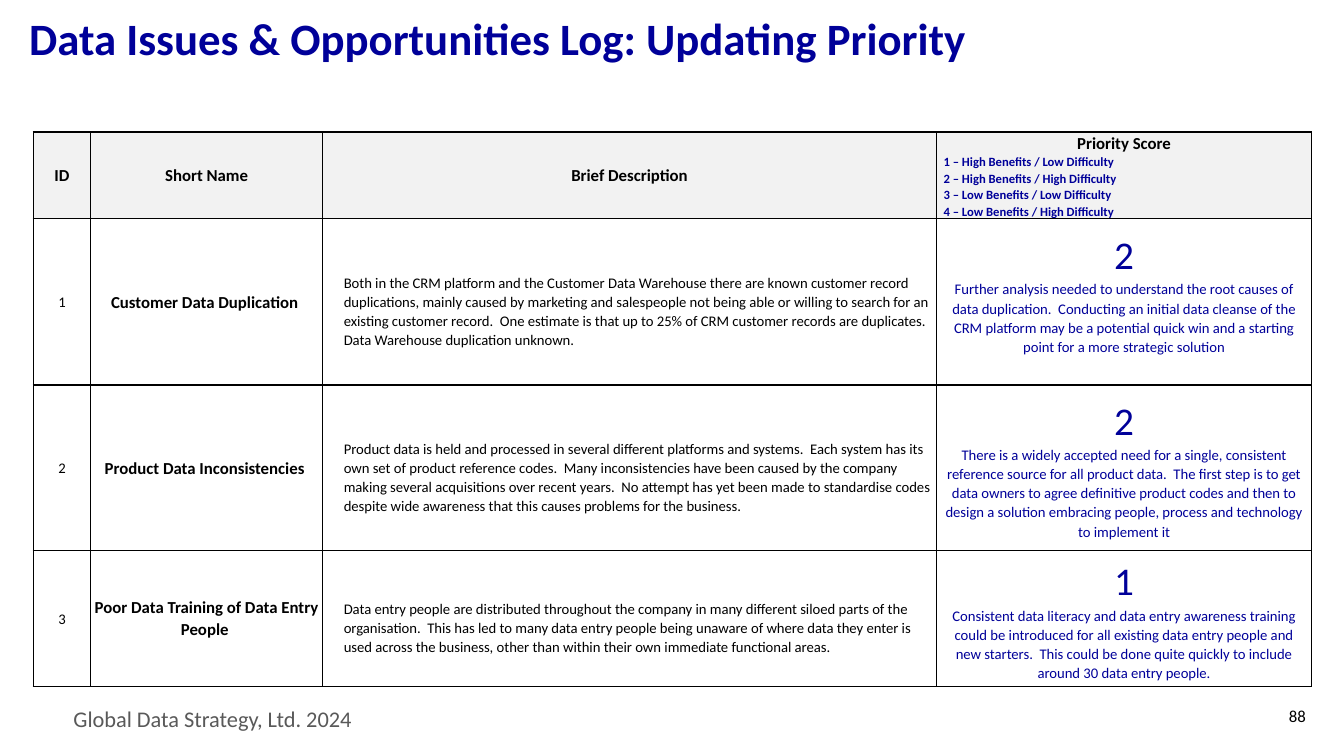
from lxml import etree
from pptx import Presentation
from pptx.dml.color import RGBColor
from pptx.enum.text import MSO_ANCHOR, PP_ALIGN
from pptx.oxml.ns import qn
from pptx.util import Inches, Pt

LEFT, CENTER, RIGHT = PP_ALIGN.LEFT, PP_ALIGN.CENTER, PP_ALIGN.RIGHT
MIDDLE, TOP = MSO_ANCHOR.MIDDLE, MSO_ANCHOR.TOP
FONT = "Calibri"
COLORS = {"navy": "000099", "black": "000000", "gray": "595959", "header": "F2F2F2"}
LINE_SPACING = 1.07
BLANK_LINE = 0.19

COLUMN_WIDTHS = [0.57, 2.3, 6.09, 3.72]
ROW_HEIGHTS = [0.86, 1.65, 1.64, 1.35]
HEADINGS = ["ID", "Short Name", "Brief Description"]
SCALE = [
    "1 – High Benefits / Low Difficulty",
    "2 – High Benefits / High Difficulty",
    "3 – Low Benefits / Low Difficulty",
    "4 – Low Benefits / High Difficulty",
]
ISSUES = [
    (
        "Customer Data Duplication ",
        "Both in the CRM platform and the Customer Data Warehouse there are known customer record duplications, "
        "mainly caused by marketing and salespeople not being able or willing to search for an existing customer "
        "record.  One estimate is that up to 25% of CRM customer records are duplicates.  Data Warehouse "
        "duplication unknown.",
        "2",
        "Further analysis needed to understand the root causes of data duplication.  Conducting an initial data "
        "cleanse of the CRM platform may be a potential quick win and a starting point for a more strategic solution",
        BLANK_LINE,
    ),
    (
        "Product Data Inconsistencies ",
        "Product data is held and processed in several different platforms and systems.  Each system has its own "
        "set of product reference codes.  Many inconsistencies have been caused by the company making several "
        "acquisitions over recent years.  No attempt has yet been made to standardise codes despite wide awareness "
        "that this causes problems for the business.",
        "2",
        "There is a widely accepted need for a single, consistent reference source for all product data.  The first "
        "step is to get data owners to agree definitive product codes and then to design a solution embracing "
        "people, process and technology to implement it",
        0,
    ),
    (
        "Poor Data Training of Data Entry People ",
        "Data entry people are distributed throughout the company in many different siloed parts of the "
        "organisation.  This has led to many data entry people being unaware of where data they enter is used "
        "across the business, other than within their own immediate functional areas.",
        "1",
        "Consistent data literacy and data entry awareness training could be introduced for all existing data entry "
        "people and new starters.  This could be done quite quickly to include around 30 data entry people.",
        0,
    ),
]


def write_paragraph(para, text, size, color="black", bold=False, align=LEFT, spacing=1.0):
    para.text = text
    para.alignment = align
    para.line_spacing = spacing
    for span in para.runs:
        span.font.name = FONT
        span.font.size = Pt(size)
        span.font.bold = bold
        span.font.color.rgb = RGBColor.from_string(COLORS[color])


def add_text(page, place, text, size, color, anchor=TOP, **style):
    box = page.shapes.add_textbox(*[Inches(length) for length in place])
    frame = box.text_frame
    frame.word_wrap = True
    frame.vertical_anchor = anchor
    write_paragraph(frame.paragraphs[0], text, size, color, **style)


def add_borders(cell):
    properties = cell._tc.get_or_add_tcPr()
    for side in ("lnL", "lnR", "lnT", "lnB"):
        line = etree.SubElement(properties, qn(f"a:{side}"), w=str(Pt(1)))
        fill = etree.SubElement(line, qn("a:solidFill"))
        etree.SubElement(fill, qn("a:srgbClr"), val=COLORS["black"])


def fill_cell(cell, lines, fill=None, left=0.01, right=0.01, top=0, bottom=0):
    add_borders(cell)
    if fill:
        cell.fill.solid()
        cell.fill.fore_color.rgb = RGBColor.from_string(COLORS[fill])
    else:
        cell.fill.background()
    cell.vertical_anchor = MIDDLE
    cell.margin_left, cell.margin_right = Inches(left), Inches(right)
    cell.margin_top, cell.margin_bottom = Inches(top), Inches(bottom)
    frame = cell.text_frame
    for index, (text, size, color, bold, align) in enumerate(lines):
        para = frame.add_paragraph() if index else frame.paragraphs[0]
        write_paragraph(para, text, size, color, bold, align, LINE_SPACING)


def add_issue_log(page):
    frame = page.shapes.add_table(
        len(ROW_HEIGHTS), len(COLUMN_WIDTHS), Inches(0.33), Inches(1.31),
        Inches(sum(COLUMN_WIDTHS)), Inches(sum(ROW_HEIGHTS)),
    )
    table = frame.table
    table.first_row = table.horz_banding = False
    for column, width in zip(table.columns, COLUMN_WIDTHS):
        column.width = Inches(width)
    for row, height in zip(table.rows, ROW_HEIGHTS):
        row.height = Inches(height)

    for index, heading in enumerate(HEADINGS):
        fill_cell(table.cell(0, index), [(heading, 12, "black", True, CENTER)], "header")
    scale = [(text, 9, "navy", True, LEFT) for text in SCALE]
    fill_cell(table.cell(0, 3), [("Priority Score", 12, "black", True, CENTER)] + scale,
              "header", left=0.07, right=0.07)

    for number, (name, description, score, reason, bottom) in enumerate(ISSUES, 1):
        fill_cell(table.cell(number, 0), [(str(number), 10.5, "black", False, CENTER)])
        fill_cell(table.cell(number, 1), [(name, 12, "black", True, CENTER)])
        fill_cell(table.cell(number, 2), [(description, 10.5, "black", False, LEFT)],
                  left=0.21, top=BLANK_LINE)
        fill_cell(
            table.cell(number, 3),
            [(score, 28, "navy", False, CENTER), (reason, 10.5, "navy", False, CENTER)],
            left=0.07, right=0.07, bottom=bottom,
        )


def main():
    deck = Presentation()
    deck.slide_width, deck.slide_height = Inches(13.33), Inches(7.5)
    page = deck.slides.add_slide(deck.slide_layouts[6])
    add_text(page, (0.63, 6.95, 3.62, 0.37), "Global Data Strategy, Ltd. 2024", 16, "gray")
    add_text(page, (0.19, -0.02, 12.68, 0.86), "Data Issues & Opportunities Log: Updating Priority",
             32, "navy", MIDDLE, bold=True, spacing=0.9)
    add_issue_log(page)
    add_text(page, (12.42, 6.95, 0.63, 0.4), "88", 12, "black", align=RIGHT)
    deck.save("out.pptx")


if __name__ == "__main__":
    main()
